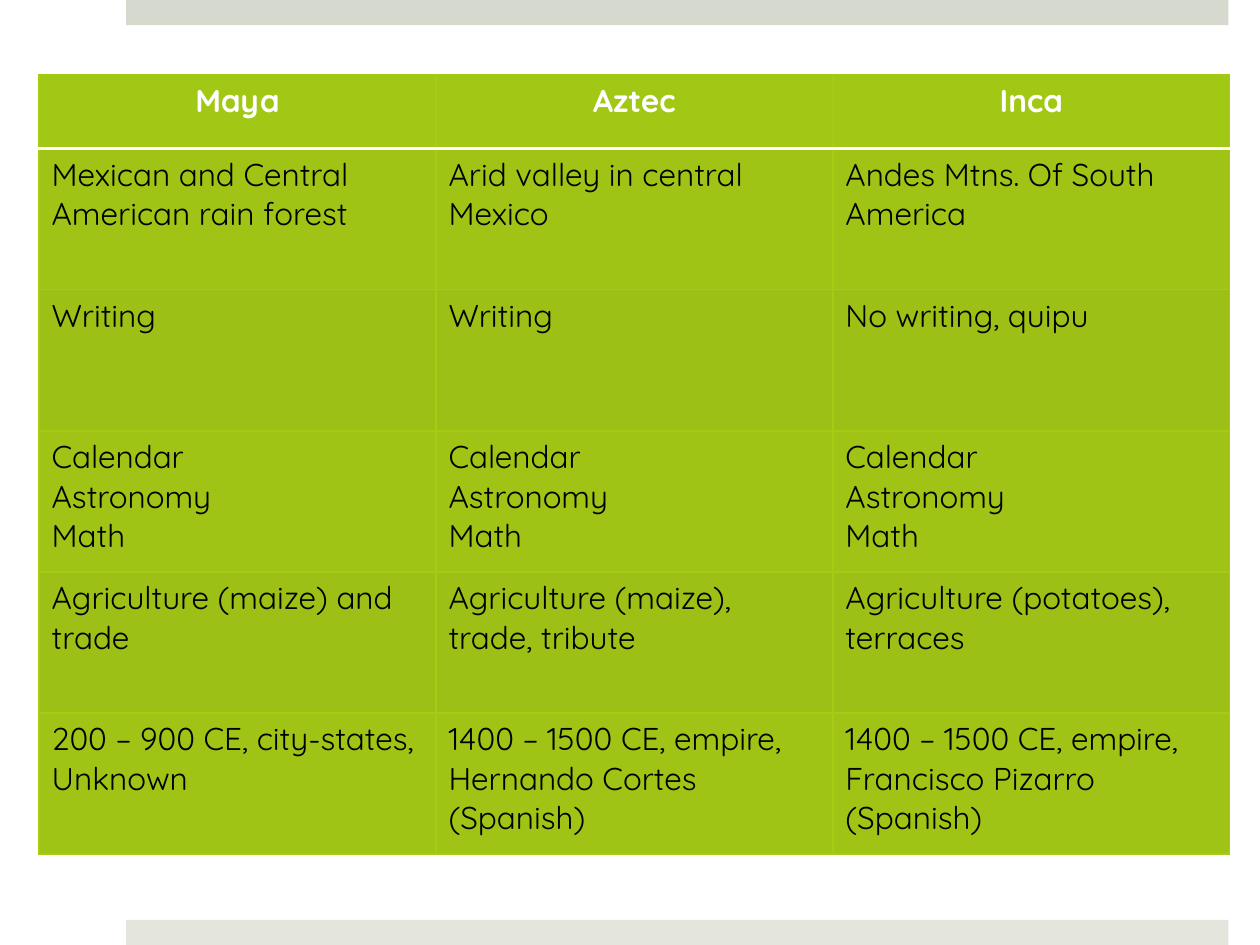
from lxml import etree
from pptx import Presentation
from pptx.dml.color import RGBColor
from pptx.enum import shapes, text
from pptx.oxml import ns
from pptx.util import Inches, Pt

# Content
CIVILIZATIONS = ["Maya", "Aztec", "Inca"]
FEATURES = [
    ["Mexican and Central American rain forest",
     "Arid valley in central Mexico",
     "Andes Mtns. Of South America"],
    ["Writing", "Writing", "No writing, quipu"],
    ["Calendar\nAstronomy\nMath"] * 3,
    ["Agriculture (maize) and trade",
     "Agriculture (maize), trade, tribute",
     "Agriculture (potatoes), terraces"],
    ["200 – 900 CE, city-states,\nUnknown",
     "1400 – 1500 CE, empire,\nHernando Cortes (Spanish)",
     "1400 – 1500 CE, empire,\nFrancisco Pizarro (Spanish)"],
]

# Style
FONT = "Quicksand"
WHITE = RGBColor(0xFF, 0xFF, 0xFF)
BLACK = RGBColor(0x00, 0x00, 0x00)
HEADER_GREEN = RGBColor(0xA2, 0xC8, 0x16)
BAND_GREENS = [RGBColor(0x9F, 0xC4, 0x15), RGBColor(0x9C, 0xC0, 0x15)]
BORDER_GREEN = RGBColor(0xA5, 0xCC, 0x12)
TOP_GRAY = RGBColor(0xD6, 0xD9, 0xCD)
BOTTOM_GRAY = RGBColor(0xE4, 0xE6, 0xDE)

COLUMN_WIDTH = 3.15
HEADER_HEIGHT, FEATURE_HEIGHT = 0.59, 1.12


def add_border(cell, side, color, points):
    line = etree.SubElement(cell._tc.get_or_add_tcPr(), ns.qn(f"a:ln{side}"),
                            w=str(Pt(points)))
    fill = etree.SubElement(line, ns.qn("a:solidFill"))
    etree.SubElement(fill, ns.qn("a:srgbClr"), val=str(color))


def format_cell(cell, row):
    is_header = row == 0
    for side in "LRTB":
        under_header = (row, side) in [(0, "B"), (1, "T")]
        add_border(cell, side, *((WHITE, 2) if under_header else (BORDER_GREEN, 1)))
    cell.fill.solid()
    cell.fill.fore_color.rgb = HEADER_GREEN if is_header else BAND_GREENS[(row - 1) % 2]
    for paragraph in cell.text_frame.paragraphs:
        paragraph.alignment = text.PP_ALIGN.CENTER if is_header else text.PP_ALIGN.LEFT
        for run in paragraph.runs:
            run.font.name = FONT
            run.font.size = Pt(18)
            run.font.bold = is_header
            run.font.color.rgb = WHITE if is_header else BLACK


prs = Presentation()
prs.slide_width, prs.slide_height = Inches(10), Inches(7.5)
slide = prs.slides.add_slide(prs.slide_layouts[6])

# Bars along the top and bottom edges
for top, gray in [(0, TOP_GRAY), (7.3, BOTTOM_GRAY)]:
    bar = slide.shapes.add_shape(shapes.MSO_SHAPE.RECTANGLE, Inches(1), Inches(top),
                                 Inches(8.75), Inches(0.2))
    bar.shadow.inherit = False
    bar.fill.solid()
    bar.fill.fore_color.rgb = gray
    bar.line.fill.background()

# Comparison table
rows = [CIVILIZATIONS] + FEATURES
heights = [HEADER_HEIGHT] + [FEATURE_HEIGHT] * len(FEATURES)
comparison = slide.shapes.add_table(
    len(rows), len(CIVILIZATIONS), Inches(0.31), Inches(0.59),
    Inches(COLUMN_WIDTH * len(CIVILIZATIONS)), Inches(sum(heights))).table
comparison.first_row = comparison.horz_banding = False
for column in comparison.columns:
    column.width = Inches(COLUMN_WIDTH)
for r, (entries, height) in enumerate(zip(rows, heights)):
    comparison.rows[r].height = Inches(height)
    for c, entry in enumerate(entries):
        cell = comparison.cell(r, c)
        cell.text_frame.text = entry
        format_cell(cell, r)

prs.save("out.pptx")
